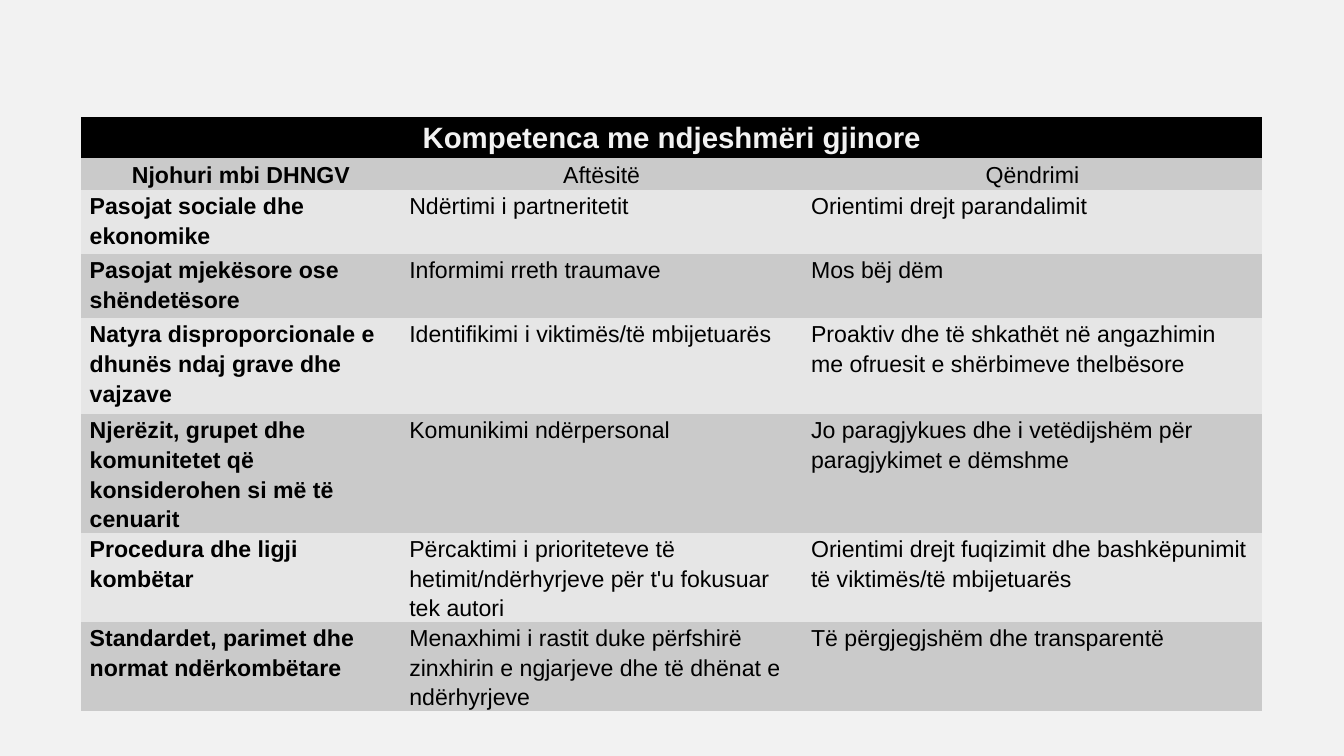
from pptx import Presentation
from pptx.dml.color import RGBColor
from pptx.enum.text import PP_ALIGN as Align
from pptx.oxml.ns import qn
from pptx.util import Inches, Pt

BLACK, PAPER = "000000", "F2F2F2"
BANDS = ["CACACA", "E6E6E6"]
NO_STYLE_NO_GRID = "{2D5ABB26-0587-4C30-8999-92F81FD0307C}"

TITLE = "Kompetenca me ndjeshmëri gjinore"
COMPETENCES = [
    ("Njohuri mbi DHNGV", "Aftësitë", "Qëndrimi"),
    ("Pasojat sociale dhe ekonomike", "Ndërtimi i partneritetit",
     "Orientimi drejt parandalimit"),
    ("Pasojat mjekësore ose shëndetësore", "Informimi rreth traumave", "Mos bëj dëm"),
    ("Natyra disproporcionale e dhunës ndaj grave dhe vajzave",
     "Identifikimi i viktimës/të mbijetuarës",
     "Proaktiv dhe të shkathët në angazhimin me ofruesit e shërbimeve thelbësore"),
    ("Njerëzit, grupet dhe komunitetet që konsiderohen si më të cenuarit",
     "Komunikimi ndërpersonal",
     "Jo paragjykues dhe i vetëdijshëm për paragjykimet e dëmshme"),
    ("Procedura dhe ligji kombëtar",
     "Përcaktimi i prioriteteve të hetimit/ndërhyrjeve për t'u fokusuar tek autori",
     "Orientimi drejt fuqizimit dhe bashkëpunimit të viktimës/të mbijetuarës"),
    ("Standardet, parimet dhe normat ndërkombëtare",
     "Menaxhimi i rastit duke përfshirë zinxhirin e ngjarjeve dhe të dhënat e ndërhyrjeve",
     "Të përgjegjshëm dhe transparentë"),
]
# Column widths, and row heights in text lines
COLUMNS = [6.34, 7.97, 9.12]
LINE = 0.635
TITLE_HEIGHT = 0.81
ROW_LINES = [1, 2, 2, 3, 3, 2, 2]


def paint(fill, color):
    fill.solid()
    fill.fore_color.rgb = RGBColor.from_string(color)


def write(cell, text, fill, size=33, color=BLACK, bold=False, align=Align.LEFT):
    paint(cell.fill, fill)
    cell.margin_left = cell.margin_right = Inches(0.17)
    cell.margin_top = cell.margin_bottom = 0
    paragraph = cell.text_frame.paragraphs[0]
    paragraph.alignment, paragraph.line_spacing = align, 1.15
    run = paragraph.add_run()
    run.text = text
    run.font.name, run.font.size, run.font.bold = "Arial", Pt(size), bold
    paint(run.font.fill, color)


# Slide and background
deck = Presentation()
deck.slide_width, deck.slide_height = Inches(26.66), Inches(15)
slide = deck.slides.add_slide(deck.slide_layouts[6])
paint(slide.background.fill, PAPER)

# Table grid, without the default banding and borders
heights = [TITLE_HEIGHT] + [LINE * lines for lines in ROW_LINES]
grid = slide.shapes.add_table(
    len(heights), len(COLUMNS), Inches(1.61), Inches(2.33),
    Inches(sum(COLUMNS)), Inches(sum(heights))).table
grid.first_row = grid.horz_banding = False
grid._tbl.tblPr.find(qn("a:tableStyleId")).text = NO_STYLE_NO_GRID
for column, width in zip(grid.columns, COLUMNS):
    column.width = Inches(width)
for row, height in zip(grid.rows, heights):
    row.height = Inches(height)

# Title across all columns
grid.cell(0, 0).merge(grid.cell(0, len(COLUMNS) - 1))
write(grid.cell(0, 0), TITLE, BLACK, size=42, color=PAPER, bold=True, align=Align.CENTER)

# Headings and competences
for r, competence in enumerate(COMPETENCES):
    for c, text in enumerate(competence):
        write(grid.cell(r + 1, c), text, BANDS[r % 2], bold=c == 0,
              align=Align.CENTER if r == 0 else Align.LEFT)

deck.save("out.pptx")
